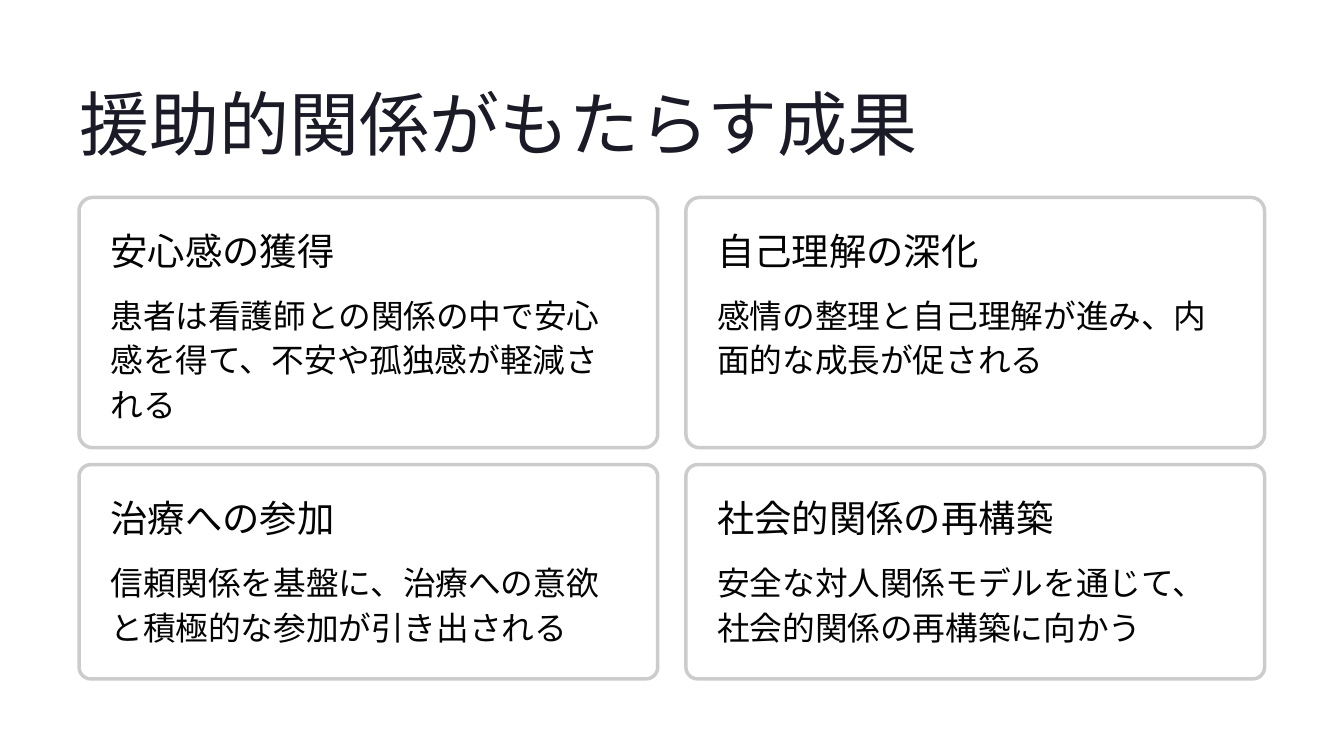
from pptx import Presentation
from pptx.dml.color import RGBColor
from pptx.enum.lang import MSO_LANGUAGE_ID as Lang
from pptx.enum.shapes import MSO_SHAPE as Shape
from pptx.oxml.ns import qn
from pptx.util import Cm, Pt
from lxml.etree import SubElement

TITLE_COLOR = RGBColor(0x1B, 0x1B, 0x27)
TEXT_COLOR = RGBColor(0x03, 0x03, 0x03)
BORDER = RGBColor(0xCC, 0xCC, 0xCC)
WHITE = RGBColor(0xFF, 0xFF, 0xFF)

LEFT = 2.39
CARD_WIDTH = 17.5
COLUMN_STEP = 18.35
PADDING = 0.95
BODY_OFFSET = 2.79

ROWS = [
    (5.97, 7.57, 1.55, 3.18, [
        ("安心感の獲得", "患者は看護師との関係の中で安心感を得て、不安や孤独感が軽減される"),
        ("自己理解の深化", "感情の整理と自己理解が進み、内面的な成長が促される"),
    ]),
    (14.05, 6.48, 1.32, 2.72, [
        ("治療への参加", "信頼関係を基盤に、治療への意欲と積極的な参加が引き出される"),
        ("社会的関係の再構築", "安全な対人関係モデルを通じて、社会的関係の再構築に向かう"),
    ]),
]


def add_text(s, text, x, y, w, h, size, spacing, font, color=TEXT_COLOR, wrap=False):
    tf = s.shapes.add_textbox(Cm(x), Cm(y), Cm(w), Cm(h)).text_frame
    tf.margin_left = tf.margin_right = tf.margin_top = tf.margin_bottom = 0
    tf.word_wrap = wrap
    p = tf.paragraphs[0]
    p.line_spacing = Pt(spacing)
    r = p.add_run()
    r.text = text
    r.font.size = Pt(size)
    r.font.name = font
    r.font.color.rgb = color
    r.font.language_id = Lang.JAPANESE
    SubElement(r.font._element, qn("a:ea")).set("typeface", font)


def add_frame(s, x, y, w, h):
    sp = s.shapes.add_shape(Shape.ROUNDED_RECTANGLE, Cm(x), Cm(y), Cm(w), Cm(h))
    sp.adjustments[0] = 0.055
    sp.shadow.inherit = False
    sp.fill.solid()
    sp.fill.fore_color.rgb = WHITE
    fill_color = sp._element.spPr.find(qn("a:solidFill")).find(qn("a:srgbClr"))
    SubElement(fill_color, qn("a:alpha")).set("val", "95000")
    sp.line.color.rgb = BORDER
    sp.line.width = Pt(3)


def add_card(s, x, y, height, heading_height, body_height, heading, body):
    add_frame(s, x, y, CARD_WIDTH, height)
    text_x = x + PADDING
    add_text(s, heading, text_x, y + PADDING, 10.64, heading_height, 32, 37.5, "Inter")
    add_text(s, body, text_x, y + BODY_OFFSET, CARD_WIDTH - 2 * PADDING, body_height,
             28, 38.5, "Roboto", wrap=True)


def main():
    prs = Presentation()
    prs.slide_width, prs.slide_height = Cm(40.64), Cm(22.86)
    s = prs.slides.add_slide(prs.slide_layouts[6])
    add_text(s, "援助的関係がもたらす成果", LEFT, 2.34, 25.5, 2.67, 60, 75, "Inter", TITLE_COLOR)
    for y, height, heading_height, body_height, cards in ROWS:
        for column, (heading, body) in enumerate(cards):
            add_card(s, LEFT + column * COLUMN_STEP, y, height,
                     heading_height, body_height, heading, body)
    prs.save("out.pptx")


if __name__ == "__main__":
    main()
